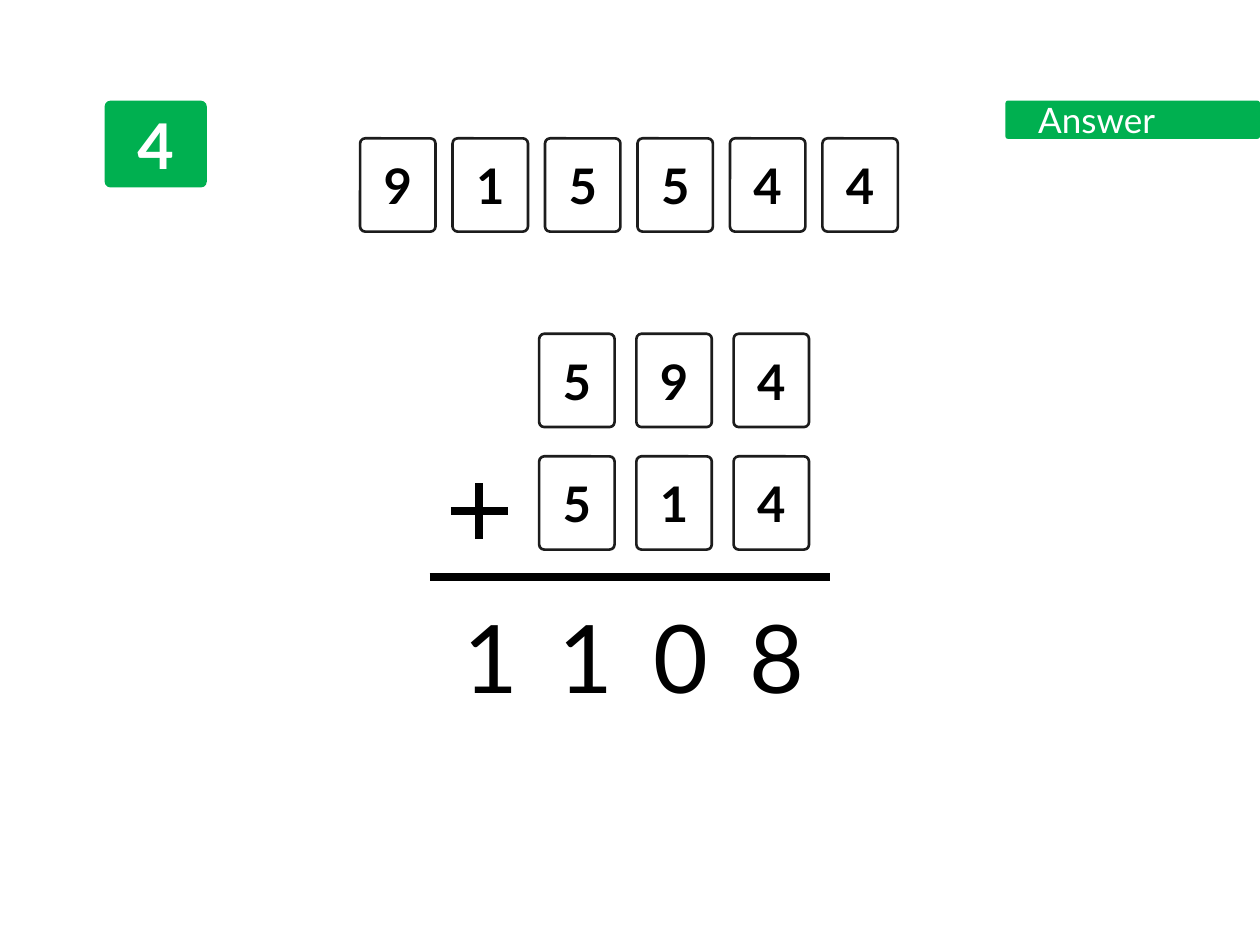
from pptx import Presentation, util as u
from pptx.dml.color import RGBColor
from pptx.enum import shapes, text
from pptx.oxml.ns import qn
from lxml import etree

GREEN, WHITE, BLACK, CARD_LINE = "00B050", "FFFFFF", "000000", "1C1C1C"

# Lengths in centimetres
CARD_SIZE = (1.52, 1.88)
CARD_ROWS = [  # digits, left, top, pitch
    ("915544", 7.26, 2.79, 1.864),
    ("594", 10.87, 6.73, 1.96),
    ("514", 10.87, 9.2, 1.96),
]
RESULT = ("1108", 9.09, 11.96, 1.92)
RESULT_SIZE = (1.4, 2.57)
LINES = {  # from x, from y, to x, to y
    "sum line": (8.66, 11.63, 16.74, 11.63),
    "plus upright": (9.65, 10.87, 9.65, 9.73),
    "plus bar": (9.09, 10.31, 10.24, 10.31),
}
LABELS = [  # text, box, font, right inset
    ("4", (2.11, 2.03, 2.06, 1.75), {"size": u.Pt(36), "bold": True}, 0.25),
    ("Answer", (20.27, 2.03, 5.13, 0.77), {"size": u.Pt(20)}, 1.7),
]
CARD_FONT = {"size": u.Pt(28), "bold": True}
RESULT_FONT = {"size": u.Pt(54)}


def color(value):
    return RGBColor.from_string(value)


def cm(values):
    return [u.Cm(value) for value in values]


def write(shape, content, font, ink):
    """Put one centred run into the shape and return the run."""
    shape.text_frame.word_wrap = True
    paragraph = shape.text_frame.paragraphs[0]
    paragraph.alignment = text.PP_ALIGN.CENTER
    run = paragraph.add_run()
    run.text = content
    for name, value in {"name": "Lato", **font}.items():
        setattr(run.font, name, value)
    run.font.color.rgb = color(ink)
    return run


def add_box(slide, content, box, font, fill, ink, outline=None):
    shape = slide.shapes.add_shape(shapes.MSO_SHAPE.ROUNDED_RECTANGLE, *cm(box))
    shape.adjustments[0] = 0.067
    shape.shadow.inherit = False
    shape.fill.solid()
    shape.fill.fore_color.rgb = color(fill)
    if outline:
        shape.line.color.rgb = color(outline)
        shape.line.width = u.Pt(1.5)
    else:
        shape.line.fill.background()
    shape.text_frame.vertical_anchor = text.MSO_ANCHOR.MIDDLE
    write(shape, content, font, ink)
    return shape


def add_line(slide, ends):
    line = slide.shapes.add_connector(shapes.MSO_CONNECTOR.STRAIGHT, *cm(ends))
    line.line.color.rgb = color(BLACK)
    line.line.width = u.Pt(4.5)
    etree.SubElement(line._element.spPr, qn("a:effectLst"))


def place(digits, left, top, pitch, size):
    """Yield each digit with its box, at equal steps along the row."""
    for column, digit in enumerate(digits):
        yield digit, (left + column * pitch, top, *size)


def main():
    presentation = Presentation()
    presentation.slide_width, presentation.slide_height = cm((25.4, 19.05))
    slide = presentation.slides.add_slide(presentation.slide_layouts[6])

    for content, box, font, right_inset in LABELS:
        label = add_box(slide, content, box, font, GREEN, WHITE)
        label.text_frame.margin_right = u.Cm(right_inset)
    for ends in LINES.values():
        add_line(slide, ends)
    for digit, box in place(*RESULT, RESULT_SIZE):
        shape = slide.shapes.add_textbox(*cm(box))
        run = write(shape, digit, RESULT_FONT, BLACK)
        run._r.get_or_add_rPr().set("spc", "300")
        shape.text_frame.auto_size = text.MSO_AUTO_SIZE.SHAPE_TO_FIT_TEXT
    for row in CARD_ROWS:
        for digit, box in place(*row, CARD_SIZE):
            add_box(slide, digit, box, CARD_FONT, WHITE, BLACK, CARD_LINE)

    presentation.save("out.pptx")


if __name__ == "__main__":
    main()
